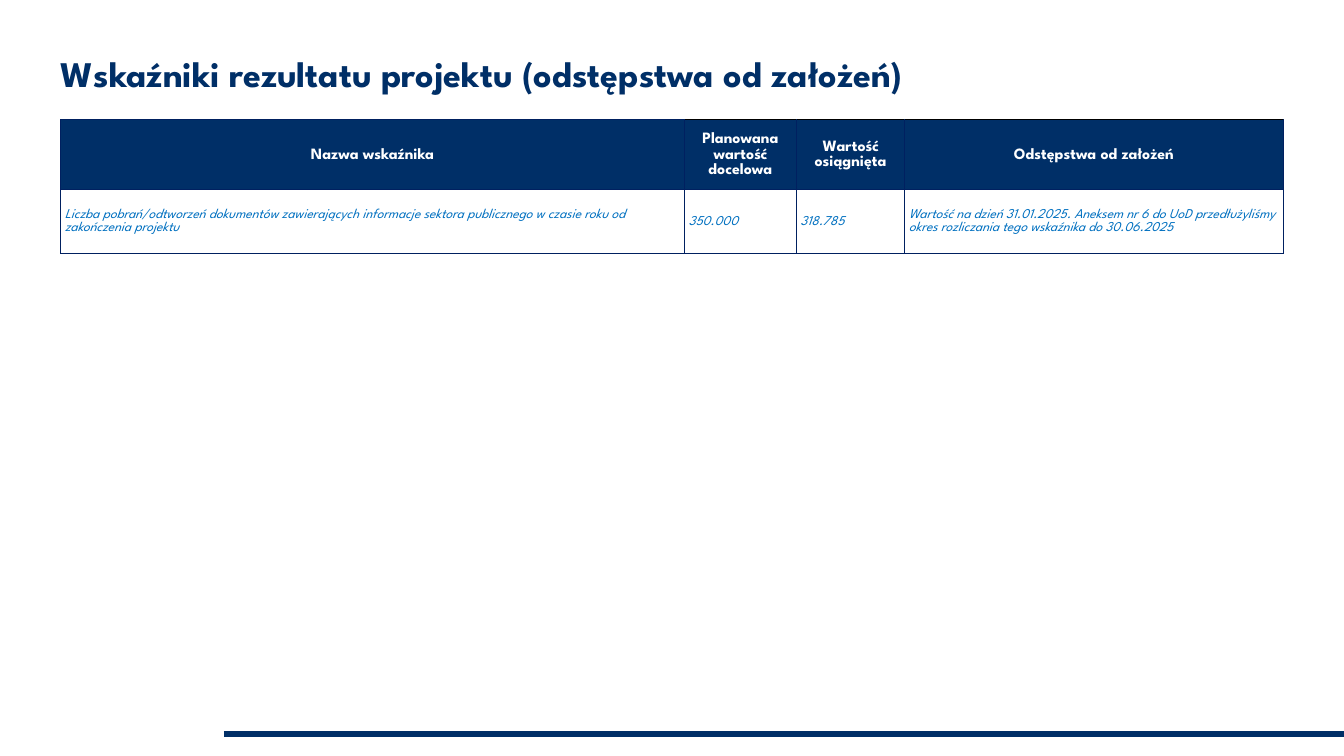
from lxml.etree import SubElement
from pptx import Presentation
from pptx.dml.color import RGBColor
from pptx.enum.shapes import MSO_CONNECTOR
from pptx.enum.text import MSO_ANCHOR, PP_ALIGN
from pptx.oxml.ns import qn
from pptx.util import Inches, Pt

THEME = {
    "font": "League Spartan",
    "navy": "002F67", "border": "002060", "top_border": "000000",
    "blue": "0070C0", "white": "FFFFFF",
    "title_size": 32, "header_size": 14, "body_size": 12,
    "bar_width": 5.25, "border_width": 1,
}
WIDTH, HEIGHT = 16.59, 9.33
MARGIN = 0.75
COLUMNS = [7.7, 1.38, 1.34, 4.67]
ROWS = [0.86, 0.79]
CONTENT = [
    ["Nazwa wskaźnika", "Planowana wartość docelowa", "Wartość osiągnięta",
     "Odstępstwa od założeń"],
    ["Liczba pobrań/odtworzeń dokumentów zawierających informacje sektora "
     "publicznego w czasie roku od zakończenia projektu",
     "350.000", "318.785",
     "Wartość na dzień 31.01.2025. Aneksem nr 6 do UoD przedłużyliśmy okres "
     "rozliczania tego wskaźnika do 30.06.2025"],
]


def style_text(frame, size, color, spacing, bold=False, italic=False):
    paragraph = frame.paragraphs[0]
    paragraph.line_spacing = spacing
    font = paragraph.runs[0].font
    font.name, font.size = THEME["font"], Pt(THEME[size])
    font.bold, font.italic = bold, italic
    font.color.rgb = RGBColor.from_string(THEME[color])
    return paragraph


def add_border(cell, side, color):
    """Draw one side (lnL, lnR, lnT or lnB); call before setting the fill."""
    line = SubElement(cell._tc.get_or_add_tcPr(), qn(f"a:{side}"),
                      w=str(Pt(THEME["border_width"])))
    fill = SubElement(line, qn("a:solidFill"))
    SubElement(fill, qn("a:srgbClr"), val=THEME[color])


deck = Presentation()
deck.slide_width, deck.slide_height = Inches(WIDTH), Inches(HEIGHT)
slide = deck.slides.add_slide(deck.slide_layouts[6])

# Footer bar: starts one sixth of the way across
bar_y = Inches(9.06)
footer_bar = slide.shapes.add_connector(
    MSO_CONNECTOR.STRAIGHT, Inches(WIDTH / 6), bar_y, Inches(WIDTH), bar_y)
footer_bar.line.color.rgb = RGBColor.from_string(THEME["navy"])
footer_bar.line.width = Pt(THEME["bar_width"])
SubElement(footer_bar._element.spPr, qn("a:effectLst"))

# Title
title = slide.shapes.add_textbox(
    Inches(MARGIN), 0, Inches(13.84), Inches(1.18)).text_frame
title.word_wrap = True
title.vertical_anchor = MSO_ANCHOR.BOTTOM
title.margin_left = title.margin_right = title.margin_top = title.margin_bottom = 0
title.text = "Wskaźniki rezultatu projektu (odstępstwa od założeń)"
style_text(title, "title_size", "navy", 0.9, bold=True)

# Indicator table
indicators = slide.shapes.add_table(
    len(ROWS), len(COLUMNS), Inches(MARGIN), Inches(1.48),
    Inches(sum(COLUMNS)), Inches(sum(ROWS))).table
indicators.first_row = indicators.horz_banding = False
for column, width in zip(indicators.columns, COLUMNS):
    column.width = Inches(width)

for r, (height, texts) in enumerate(zip(ROWS, CONTENT)):
    indicators.rows[r].height = Inches(height)
    is_header = r == 0
    side_margin, end_margin = (0.07, 0) if is_header else (0.05, 0.05)
    for c, text in enumerate(texts):
        cell = indicators.cell(r, c)
        cell.text_frame.text = text
        cell.vertical_anchor = MSO_ANCHOR.MIDDLE
        cell.margin_left = cell.margin_right = Inches(side_margin)
        cell.margin_top = cell.margin_bottom = Inches(end_margin)
        for side in ("lnL", "lnR", "lnT", "lnB"):
            black_top = is_header and c > 0 and side == "lnT"
            add_border(cell, side, "top_border" if black_top else "border")
        if is_header:
            cell.fill.solid()
            cell.fill.fore_color.rgb = RGBColor.from_string(THEME["navy"])
            label = style_text(cell.text_frame, "header_size", "white", 1.07, bold=True)
            label.alignment = PP_ALIGN.CENTER
        else:
            cell.fill.background()
            style_text(cell.text_frame, "body_size", "blue", 1.07, italic=True)

deck.save("out.pptx")
